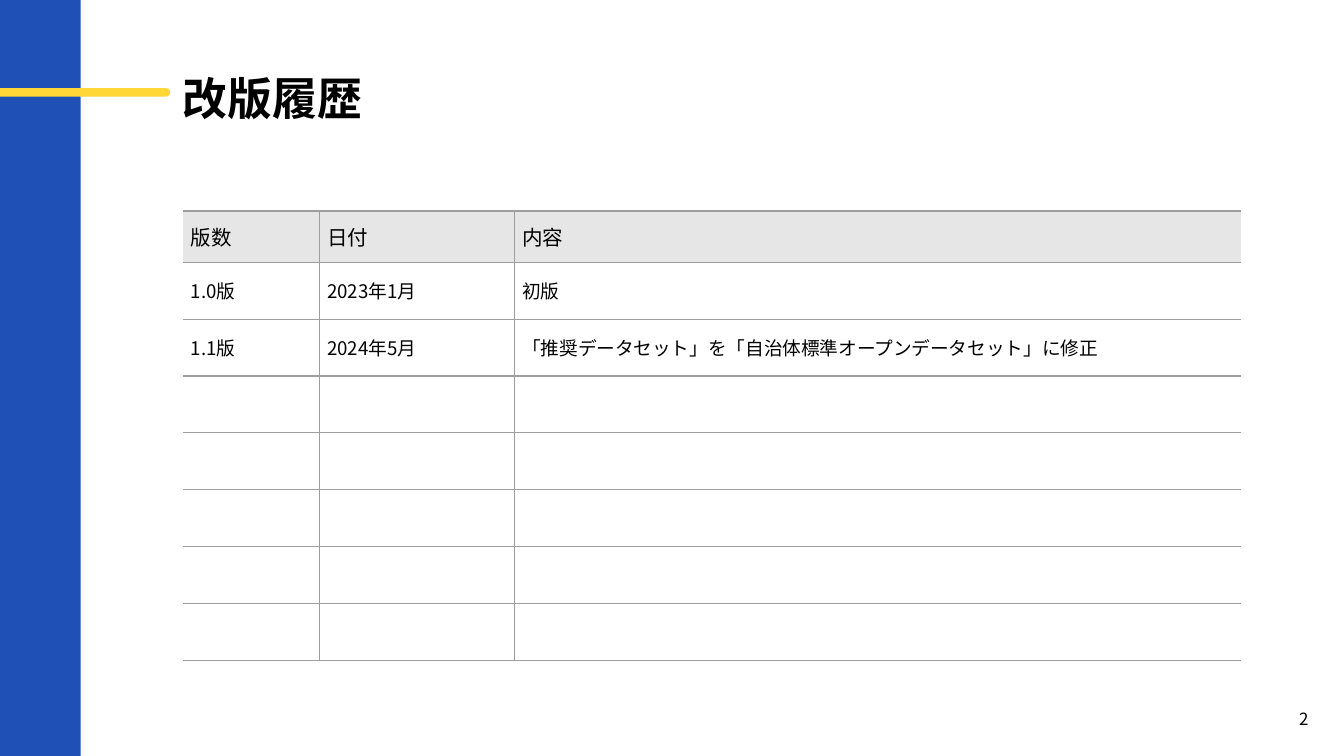
import pptx
import pptx.dml.color
import pptx.enum.shapes
import pptx.enum.text
import pptx.oxml.ns
import pptx.util
from lxml import etree

Pt = pptx.util.Pt
SHAPES = pptx.enum.shapes.MSO_SHAPE
ALIGN = pptx.enum.text.PP_ALIGN
ANCHOR = pptx.enum.text.MSO_ANCHOR
qn = pptx.oxml.ns.qn

FONT = "Noto Sans CJK JP"
COLORS = {
    "band": "1E50B5",
    "accent": "FFD737",
    "text": "000000",
    "header": "E7E6E6",
    "rule": "9E9E9E",
}
HEADINGS = ("版数", "日付", "内容")
REVISIONS = (
    ("1.0版", "2023年1月", "初版"),
    ("1.1版", "2024年5月", "「推奨データセット」を「自治体標準オープンデータセット」に修正"),
)
EMPTY_ROWS = 5
COLUMN_WIDTHS = (73, 104.5, 389.5)
HEADER_HEIGHT, ROW_HEIGHT = 27.5, 30.5


def rgb(name):
    return pptx.dml.color.RGBColor.from_string(COLORS[name])


def set_attributes(target, values):
    for name, value in values.items():
        setattr(target, name, value)


def write_text(paragraph, text, size, bold=False):
    if not text:
        # The end mark keeps an empty row from growing to the default size.
        etree.SubElement(paragraph._p, qn("a:endParaRPr"), sz=str(size * 100))
        return
    run = paragraph.add_run()
    run.text = text
    set_attributes(run.font, {"size": Pt(size), "bold": bold, "name": FONT})
    run.font.color.rgb = rgb("text")
    etree.SubElement(run._r.get_or_add_rPr(), qn("a:ea"), typeface=FONT)


def add_label(slide, box, text, size, bold=False, align=ALIGN.LEFT, anchor=ANCHOR.TOP):
    frame = slide.shapes.add_textbox(*map(Pt, box)).text_frame
    set_attributes(frame, {
        "word_wrap": True, "vertical_anchor": anchor,
        "margin_left": 0, "margin_right": 0, "margin_top": 0, "margin_bottom": 0,
    })
    paragraph = frame.paragraphs[0]
    paragraph.alignment = align
    write_text(paragraph, text, size, bold)


def add_block(slide, kind, box, color):
    shape = slide.shapes.add_shape(kind, *map(Pt, box))
    shape.shadow.inherit = False
    shape.fill.solid()
    shape.fill.fore_color.rgb = rgb(color)
    shape.line.fill.background()
    return shape


def add_side_band(slide, box):
    """Blue band with a yellow rounded bar leading to the title."""
    left, top, width, height = box
    add_block(slide, SHAPES.RECTANGLE, box, "band")
    bar_box = (left - 8, top + 47.2, width + 56, 4.6)
    bar = add_block(slide, SHAPES.ROUNDED_RECTANGLE, bar_box, "accent")
    bar.adjustments[0] = 0.5


def set_borders(cell, sides):
    properties = cell._tc.get_or_add_tcPr()
    for side in "LRTB":
        line = etree.SubElement(properties, qn(f"a:ln{side}"), w=str(Pt(0.75)))
        if side in sides:
            fill = etree.SubElement(line, qn("a:solidFill"))
            etree.SubElement(fill, qn("a:srgbClr"), val=COLORS["rule"])
        else:
            etree.SubElement(line, qn("a:noFill"))


def add_revision_table(slide, box):
    rows = [HEADINGS, *REVISIONS] + [("",) * len(HEADINGS)] * EMPTY_ROWS
    table = slide.shapes.add_table(len(rows), len(HEADINGS), *map(Pt, box)).table
    set_attributes(table, {"first_row": False, "horz_banding": False})
    for column, width in zip(table.columns, COLUMN_WIDTHS):
        column.width = Pt(width)
    sides_by_column = ("RTB", "LRTB", "LTB")
    for row_index, texts in enumerate(rows):
        is_header = row_index == 0
        table.rows[row_index].height = Pt(HEADER_HEIGHT if is_header else ROW_HEIGHT)
        for column_index, text in enumerate(texts):
            cell = table.cell(row_index, column_index)
            set_attributes(cell, {
                "vertical_anchor": ANCHOR.MIDDLE,
                "margin_left": Pt(4.3), "margin_right": Pt(4.3),
                "margin_top": Pt(4.3), "margin_bottom": Pt(4.3),
            })
            set_borders(cell, sides_by_column[column_index])
            if is_header:
                cell.fill.solid()
                cell.fill.fore_color.rgb = rgb("header")
            else:
                cell.fill.background()
            write_text(cell.text_frame.paragraphs[0], text, 11 if is_header else 10)


def build_revision_slide(presentation, box):
    left, top, width, height = box
    slide = presentation.slides.add_slide(presentation.slide_layouts[6])
    add_side_band(slide, (left, top, 43.2, height))
    content_left, content_width = left + 98, sum(COLUMN_WIDTHS)
    add_label(slide, (content_left, top + 38, content_width, 29), "改版履歴", 24, bold=True)
    add_label(slide, (left + width - 37, top + height - 35.5, 31, 31), "2", 9,
              align=ALIGN.CENTER, anchor=ANCHOR.MIDDLE)
    table_height = HEADER_HEIGHT + ROW_HEIGHT * (len(REVISIONS) + EMPTY_ROWS)
    add_revision_table(slide, (content_left, top + 113, content_width, table_height))


def main():
    presentation = pptx.Presentation()
    width, height = 720, 405
    set_attributes(presentation, {"slide_width": Pt(width), "slide_height": Pt(height)})
    build_revision_slide(presentation, (0, 0, width, height))
    presentation.save("out.pptx")


if __name__ == "__main__":
    main()
